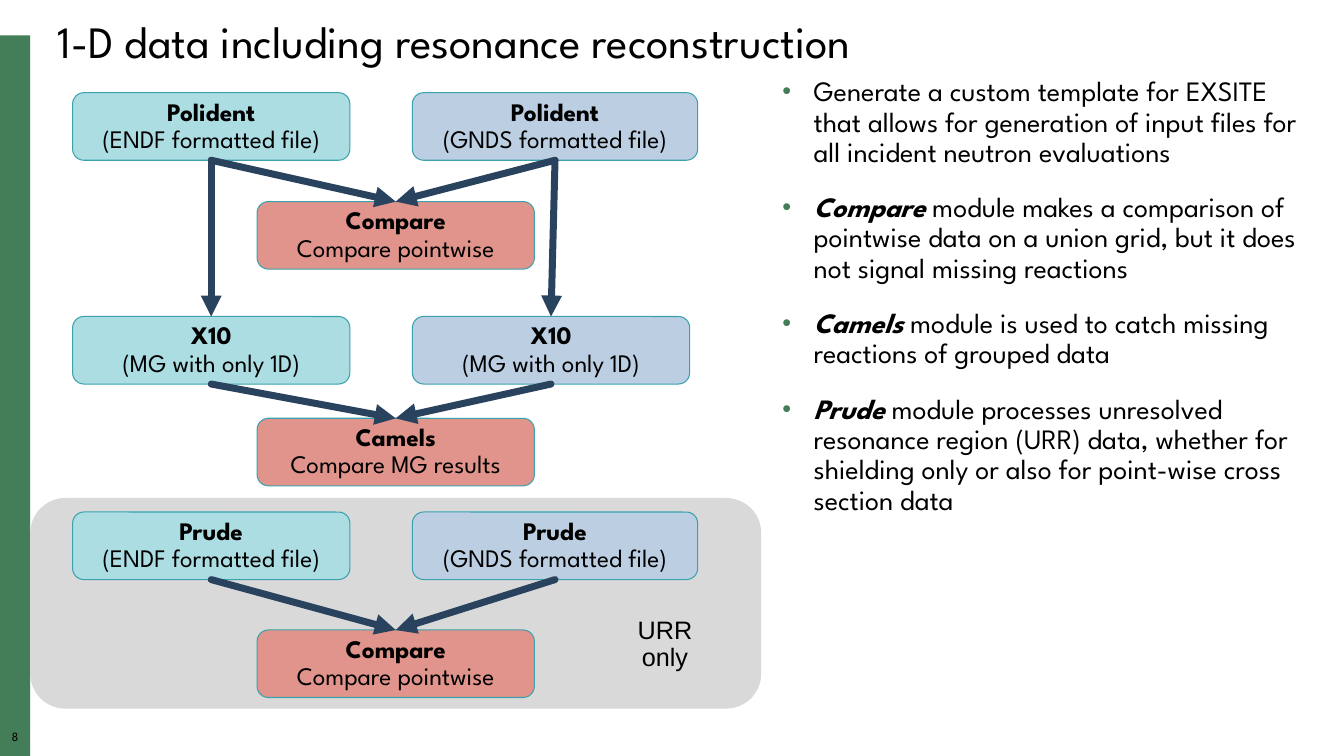
from pptx import Presentation
from pptx.dml.color import RGBColor
from pptx.enum.shapes import MSO_CONNECTOR as Connector, MSO_SHAPE as Shape
from pptx.enum.text import MSO_ANCHOR as Anchor, MSO_AUTO_SIZE as AutoSize, PP_ALIGN as Align
from pptx.oxml.ns import qn
from pptx.util import Inches, Pt
from lxml.etree import SubElement

FONT = "League Spartan"
GREEN, GREY, NAVY, TEAL = "447E59", "D9D9D9", "29425E", "3BA2AD"
ENDF_FILL, GNDS_FILL, RESULT_FILL = "ACDDE3", "BCCEE2", "E0948B"

# Flow grid: column offsets from the left edge of a stage, and the size of a step
GNDS_COLUMN, RESULT_COLUMN = 3.37, 1.83
STEP_WIDTH, STEP_HEIGHT = 2.75, 0.67

# Each stage: top, drop to the result, width of the GNDS step, then the texts
STAGES = [
    (0.92, 1.08, 2.83, ("Polident", "(ENDF formatted file)"),
     ("Polident", "(GNDS formatted file)"), ("Compare", "Compare pointwise")),
    (3.14, 1.01, 2.75, ("X10", "(MG with only 1D)"),
     ("X10", "(MG with only 1D)"), ("Camels", "Compare MG results")),
    (5.08, 1.17, 2.83, ("Prude", "(ENDF formatted file)"),
     ("Prude", "(GNDS formatted file)"), ("Compare", "Compare pointwise")),
]
NOTES = [
    ("", "Generate a custom template for EXSITE that allows for generation of "
         "input files for all incident neutron evaluations"),
    ("Compare", " module makes a comparison of pointwise data on a union grid, "
                "but it does not signal missing reactions"),
    ("Camels", " module is used to catch missing reactions of grouped data"),
    ("Prude", " module processes unresolved resonance region (URR) data, whether "
              "for shielding only or also for point-wise cross section data"),
]


def color(value):
    return RGBColor.from_string(value)


def add_span(para, text, size, name=FONT, **formats):
    span = para.add_run()
    span.text = text
    for key, value in dict(formats, size=Pt(size), name=name).items():
        setattr(span.font, key, value)
    span.font.color.rgb = color("000000")


def set_frame(frame, margins=(0.1, 0.05), anchor=Anchor.TOP):
    side, end = (Inches(margin) for margin in margins)
    settings = dict(word_wrap=True, auto_size=AutoSize.NONE, vertical_anchor=anchor,
                    margin_left=side, margin_right=side, margin_top=end, margin_bottom=end)
    for key, value in settings.items():
        setattr(frame, key, value)
    return frame


def set_para(para, align=Align.CENTER, before=0):
    for key, value in dict(alignment=align, line_spacing=0.9, space_before=Pt(before)).items():
        setattr(para, key, value)
    return para


def move(item, box):
    for key, value in zip(("left", "top", "width", "height"), box):
        setattr(item, key, Inches(value))


def add_panel(page, kind, box, fill, line=None):
    panel = page.shapes.add_shape(kind, *map(Inches, box))
    panel.shadow.inherit = False
    panel.fill.solid()
    panel.fill.fore_color.rgb = color(fill)
    if line:
        panel.line.color.rgb = color(line)
        panel.line.width = Pt(0.75)
    else:
        panel.line.fill.background()
    return panel


def add_label(page, box, text, size, name=FONT, margins=(0.1, 0.05)):
    label = page.shapes.add_textbox(*map(Inches, box))
    para = set_para(set_frame(label.text_frame, margins).paragraphs[0])
    add_span(para, text, size, name)


def add_step(page, box, fill, texts):
    step = add_panel(page, Shape.ROUNDED_RECTANGLE, box, fill, TEAL)
    frame = set_frame(step.text_frame, (0.05, 0.05), Anchor.MIDDLE)
    module, detail = texts
    add_span(set_para(frame.paragraphs[0]), module, 18, bold=True)
    add_span(set_para(frame.add_paragraph()), detail, 18)
    return step


def add_arrow(page, source, target):
    """Join the bottom of one step to the top of another."""
    arrow = page.shapes.add_connector(Connector.STRAIGHT, 0, 0, 0, 0)
    arrow.begin_connect(source, 2)
    arrow.end_connect(target, 0)
    arrow.line.color.rgb = color(NAVY)
    arrow.line.width = Pt(5)
    outline = arrow.line._get_or_add_ln()
    outline.set("cap", "rnd")
    SubElement(outline, qn("a:tailEnd"), type="triangle")
    SubElement(arrow._element.spPr, qn("a:effectLst"))


def add_stage(page, left, stage):
    top, drop, gnds_width, endf_texts, gnds_texts, result_texts = stage
    endf = add_step(page, (left, top, STEP_WIDTH, STEP_HEIGHT), ENDF_FILL, endf_texts)
    gnds = add_step(page, (left + GNDS_COLUMN, top, gnds_width, STEP_HEIGHT),
                    GNDS_FILL, gnds_texts)
    result = add_step(page, (left + RESULT_COLUMN, top + drop, STEP_WIDTH, STEP_HEIGHT),
                      RESULT_FILL, result_texts)
    return endf, gnds, result


def add_flow(page, box):
    # Grey area for the unresolved region
    left, top, width, height = box
    add_panel(page, Shape.ROUNDED_RECTANGLE, box, GREY)
    # Steps, then the arrows above them
    stages = [add_stage(page, left + 0.42, stage) for stage in STAGES]
    for endf, gnds, result in stages:
        add_arrow(page, endf, result)
        add_arrow(page, gnds, result)
    for source, target in zip(stages[0][:2], stages[1][:2]):
        add_arrow(page, source, target)
    add_label(page, (left + 5.67, top + 1.14, 1.25, 0.65), "URR only", 18, "Arial")


def add_bullet(para):
    properties = para._p.get_or_add_pPr()
    properties.set("marL", str(Inches(0.31)))
    properties.set("indent", str(-Inches(0.31)))
    bullet_color = SubElement(properties, qn("a:buClr"))
    SubElement(bullet_color, qn("a:srgbClr"), val=GREEN)
    SubElement(properties, qn("a:buSzPct"), val="90000")
    SubElement(properties, qn("a:buFont"), typeface="Arial")
    SubElement(properties, qn("a:buChar"), char="•")


def fill_title(title, box):
    move(title, box)
    frame = set_frame(title.text_frame, anchor=Anchor.MIDDLE)
    add_span(set_para(frame.paragraphs[0], Align.LEFT),
             "1-D data including resonance reconstruction", 32)


def fill_notes(body, box):
    move(body, box)
    frame = set_frame(body.text_frame)
    for index, (module, text) in enumerate(NOTES):
        para = frame.add_paragraph() if index else frame.paragraphs[0]
        set_para(para, Align.LEFT, 18 if index else 0)
        add_bullet(para)
        if module:
            add_span(para, module, 20, bold=True, italic=True)
        add_span(para, text, 20)


def add_side_bar(page, box):
    left, top, width, height = box
    add_panel(page, Shape.RECTANGLE, box, GREEN)
    add_label(page, (left, top + height - 0.25, width, 0.17), "8", 9, margins=(0, 0))


def main():
    deck = Presentation()
    deck.slide_width, deck.slide_height = Inches(13.33), Inches(7.5)
    page = deck.slides.add_slide(deck.slide_layouts[1])
    add_side_bar(page, (0, 0.35, 0.3, 7.15))
    fill_title(page.shapes.title, (0.47, 0.14, 12.5, 0.59))
    add_flow(page, (0.3, 4.94, 7.25, 2.09))
    fill_notes(page.placeholders[1], (7.66, 0.72, 5.31, 6.4))
    deck.save("out.pptx")


if __name__ == "__main__":
    main()
